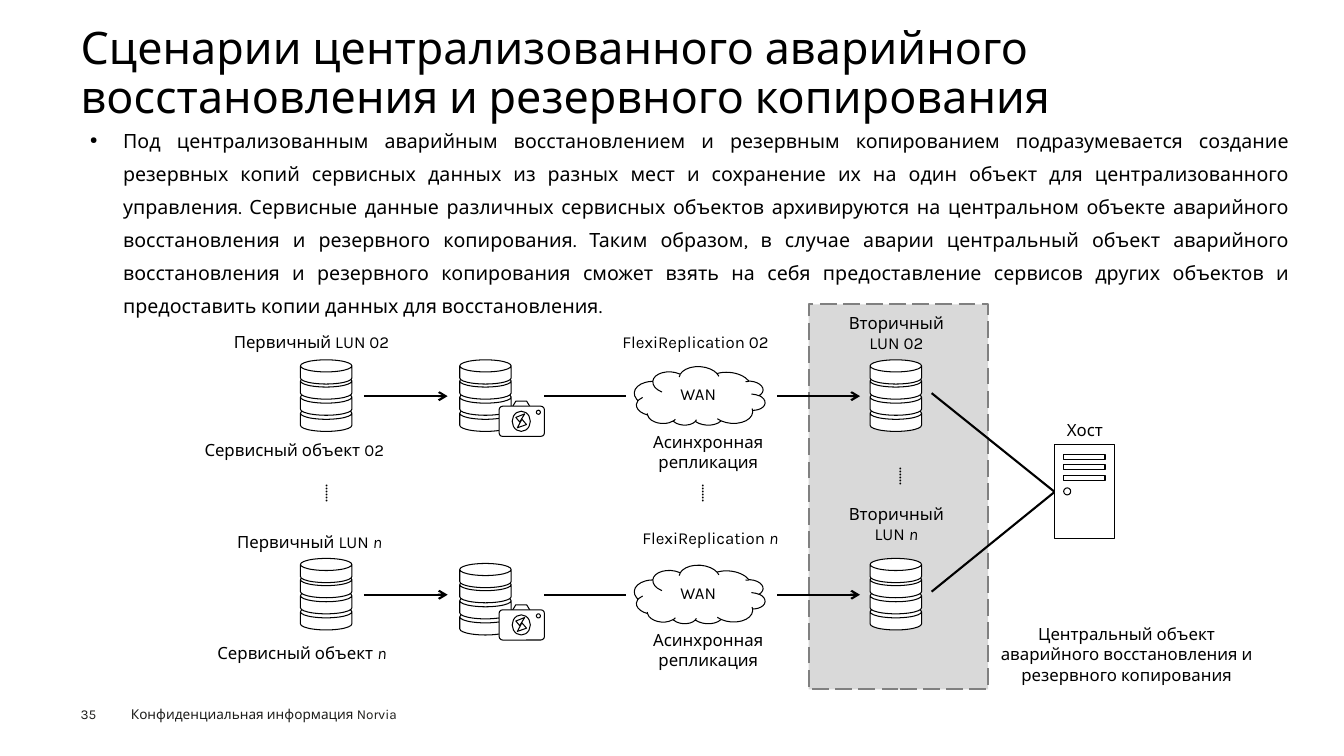
import pptx
import pptx.util
import pptx.dml.color
import pptx.enum.dml
import pptx.enum.shapes
import pptx.enum.text
import pptx.oxml
import lxml.etree

PX = 9144
FACE = "Karla"
HUES = {"ink": "000000", "paper": "FFFFFF", "zone": "D9D9D9", "edge": "808080", "foot": "1D1D1B"}
KIND = pptx.enum.shapes.MSO_SHAPE
ALIGN = pptx.enum.text.PP_ALIGN
ANCHOR = pptx.enum.text.MSO_ANCHOR
FIXED = pptx.enum.text.MSO_AUTO_SIZE.NONE
FLUSH = dict.fromkeys(("margin_left", "margin_top", "margin_right", "margin_bottom"), 0)

TITLE = "Сценарии централизованного аварийного восстановления и резервного копирования"
INTRO = (
    "Под централизованным аварийным восстановлением и резервным копированием подразумевается "
    "создание резервных копий сервисных данных из разных мест и сохранение их на один объект "
    "для централизованного управления. Сервисные данные различных сервисных объектов "
    "архивируются на центральном объекте аварийного восстановления и резервного копирования. "
    "Таким образом, в случае аварии центральный объект аварийного восстановления и резервного "
    "копирования сможет взять на себя предоставление сервисов других объектов и предоставить "
    "копии данных для восстановления."
)
LABELS = [
    ((186, 421, 212, 50), "Сервисный объект 02", ""),
    ((200, 630, 199, 36), "Сервисный объект ", "n"),
    ((627, 423, 151, 50), "Асинхронная репликация", ""),
    ((627, 620, 151, 50), "Асинхронная репликация", ""),
    ((979, 624, 277, 50), "Центральный объект аварийного восстановления и резервного копирования", ""),
    ((217, 314, 184, 50), "Первичный LUN 02", ""),
    ((213, 513, 188, 50), "Первичный LUN ", "n"),
    ((587, 314, 206, 50), "FlexiReplication 02", ""),
    ((617, 509, 175, 50), "FlexiReplication ", "n"),
    ((828, 305, 122, 50), "Вторичный LUN 02", ""),
    ((828, 495, 122, 50), "Вторичный LUN ", "n"),
    ((1015, 411, 122, 30), "Хост", ""),
]
CAMERA = [
    (KIND.FLOWCHART_PREPARATION, (52, 41, 18, 12), 0),
    (KIND.ROUNDED_RECTANGLE, (39, 46, 45, 30), 0),
    (KIND.OVAL, (52, 51, 18, 20), 0),
    (KIND.OVAL, (76, 50, 4, 4), 0),
    (KIND.ISOSCELES_TRIANGLE, (58, 52, 6, 9), 50),
    (KIND.ISOSCELES_TRIANGLE, (57, 60, 7, 9), 229.2),
]


def place(box):
    return [n * PX for n in box]


def tint(hue):
    return pptx.dml.color.RGBColor.from_string(HUES[hue])


def format(thing, **vals):
    for name, val in vals.items():
        setattr(thing, name, val)


def write(frame, text, size=12, hue="ink", tail="", para=None, **vals):
    format(frame, word_wrap=True, auto_size=FIXED, **vals)
    line = frame.paragraphs[0]
    format(line, **(para or {}))
    for words, slant in ((text, False), (tail, True)):
        if words:
            run = line.add_run()
            run.text = words
            format(run.font, name=FACE, size=pptx.util.Pt(size), italic=slant)
            run.font.color.rgb = tint(hue)
    return line


def label(slide, box, text, **vals):
    shape = slide.shapes.add_textbox(*place(box))
    write(shape.text_frame, text, **vals)
    return shape


def draw(slide, kind, box, fill="paper", line="ink", width=0.75, turn=0, bend=None):
    shape = slide.shapes.add_shape(kind, *place(box))
    shape.shadow.inherit = False
    shape.rotation = turn
    shape.fill.solid()
    shape.fill.fore_color.rgb = tint(fill)
    if line:
        shape.line.color.rgb = tint(line)
        shape.line.width = pptx.util.Pt(width)
    else:
        shape.line.fill.background()
    if bend is not None:
        shape.adjustments[0] = bend
    return shape


def link(slide, start, end, head=False):
    wire = slide.shapes.add_connector(pptx.enum.shapes.MSO_CONNECTOR.STRAIGHT, *place(start + end))
    wire.line.color.rgb = tint("ink")
    wire.line.width = pptx.util.Pt(1.5)
    props = wire._element.spPr
    if head:
        tip = lxml.etree.SubElement(wire.line._get_or_add_ln(), pptx.oxml.ns.qn("a:tailEnd"))
        tip.set("type", "arrow")
    lxml.etree.SubElement(props, pptx.oxml.ns.qn("a:effectLst"))


def disks(slide, left, top):
    for step in range(3, -1, -1):
        draw(slide, KIND.CAN, (left, top + step * 47 // 3, 51, 24), bend=0.5)


def shot(slide, left, top):
    disks(slide, left, top)
    for kind, (x, y, wide, high), turn in CAMERA:
        bend = 0.12 if kind == KIND.ROUNDED_RECTANGLE else None
        draw(slide, kind, (left + x, top + y, wide, high), turn=turn, bend=bend)


def cloud(slide, left, top):
    draw(slide, KIND.CLOUD, (left, top, 130, 59), turn=184.2)
    plate = draw(slide, KIND.RECTANGLE, (left + 36, top + 12, 71, 30), line=None)
    write(plate.text_frame, "WAN", para={"alignment": ALIGN.LEFT}, vertical_anchor=ANCHOR.MIDDLE)


def host(slide, left, top):
    draw(slide, KIND.RECTANGLE, (left, top, 59, 93))
    for slot in range(3):
        draw(slide, KIND.RECTANGLE, (left + 9, top + 10 + slot * 21 // 2, 41, 5))
    draw(slide, KIND.OVAL, (left + 9, top + 43, 7, 7))


def dots(slide, left, top):
    shape = label(slide, (left, top, 40, 49), "......", vertical_anchor=ANCHOR.MIDDLE)
    shape.text_frame._txBody.bodyPr.set("vert", "eaVert")


def intro(slide):
    shape = label(slide, (80, 115, 1208, 533), INTRO, size=14,
                  margin_left=9 * PX, margin_right=9 * PX, margin_top=4 * PX, margin_bottom=4 * PX)
    line = shape.text_frame.paragraphs[0]
    props = line._p.get_or_add_pPr()
    props.set("marL", str(33 * PX))
    props.set("indent", str(-33 * PX))
    for tag, key, val in (("buSzPct", "val", "50000"), ("buChar", "char", "●")):
        lxml.etree.SubElement(props, pptx.oxml.ns.qn("a:" + tag)).set(key, val)
    format(line, alignment=ALIGN.JUSTIFY, line_spacing=1.4)


def scheme(slide):
    zone = draw(slide, KIND.RECTANGLE, (802, 302, 178, 382), "zone", "edge", 1.5)
    zone.line.dash_style = pptx.enum.dml.MSO_LINE.LONG_DASH
    for top, drop in ((357, 0), (554, 5)):
        disks(slide, 298, top)
        disks(slide, 863, top)
        shot(slide, 456, top + drop)
        mid = top + 36
        link(slide, (361, mid), (444, mid), True)
        link(slide, (771, mid), (853, mid), True)
        link(slide, (540, mid), (621, mid))
        link(slide, (924, top + 33), (1046, 488))
        cloud(slide, 629, top + 7)
    host(slide, 1046, 441)
    for box, text, tail in LABELS:
        label(slide, box, text, tail=tail, para={"alignment": ALIGN.CENTER},
              vertical_anchor=ANCHOR.MIDDLE)
    for left, top in ((310, 471), (683, 471), (879, 454)):
        dots(slide, left, top)


def main():
    deck = pptx.Presentation()
    format(deck, slide_width=1333 * PX, slide_height=750 * PX)
    slide = deck.slides.add_slide(deck.slide_layouts[5])
    title = slide.shapes.title
    format(title, **dict(zip(("left", "top", "width", "height"), place((80, 26, 1173, 54)))))
    write(title.text_frame, TITLE, size=32, vertical_anchor=ANCHOR.TOP,
          para={"alignment": ALIGN.LEFT, "line_spacing": 0.9}, **FLUSH)
    intro(slide)
    scheme(slide)
    label(slide, (120, 695, 376, 26), "Конфиденциальная информация Norvia", size=9.7, hue="foot")
    label(slide, (80, 700, 55, 16), "35", size=9.7, hue="foot", **FLUSH)
    deck.save("out.pptx")


if __name__ == "__main__":
    main()
